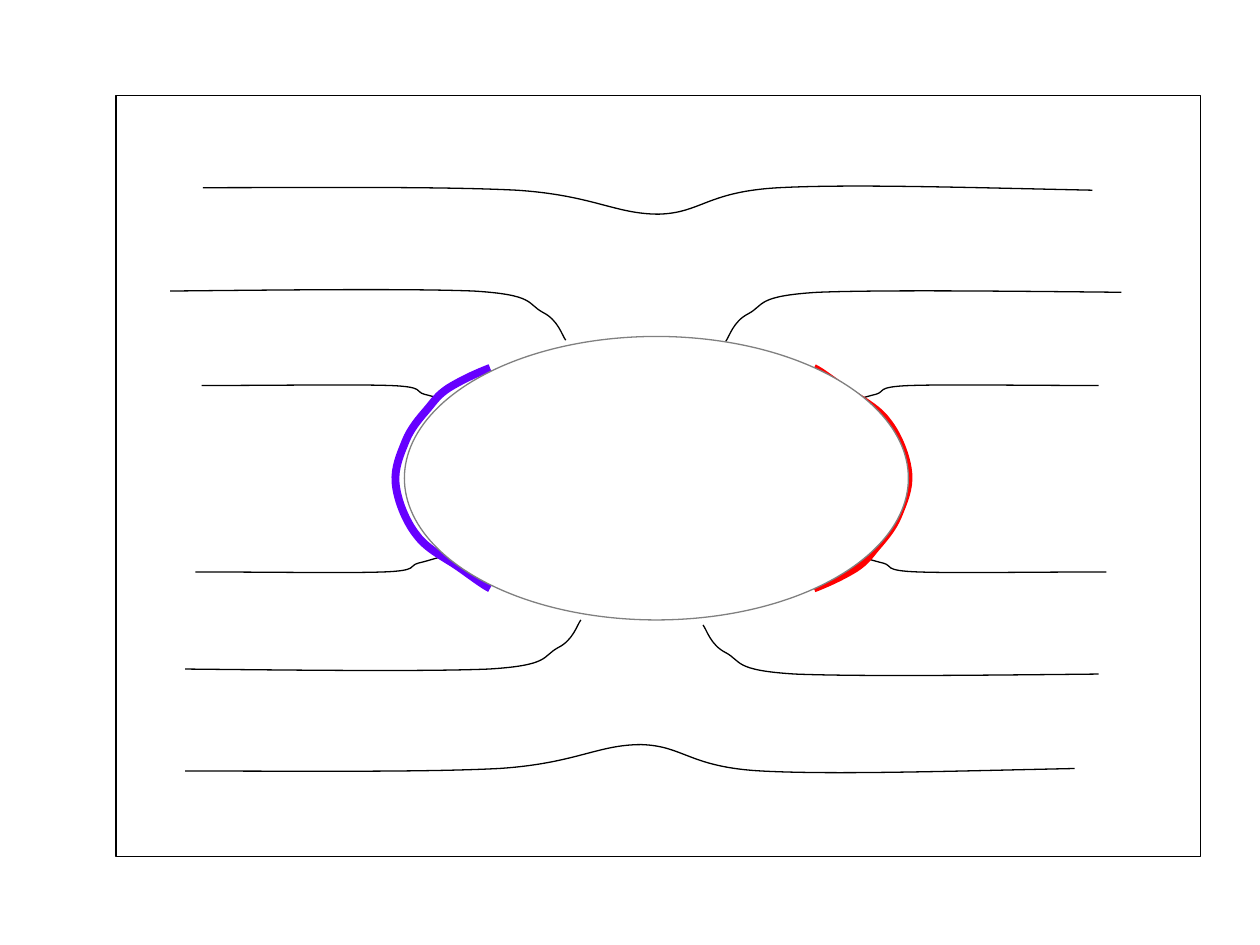
from dataclasses import dataclass

from pptx import Presentation
from pptx import util as u
from pptx.dml.color import RGBColor
from pptx.enum import shapes
from pptx.oxml.xmlchemy import OxmlElement


@dataclass(frozen=True)
class Theme:
    paper: str = "FFFFFF"
    ink: str = "000000"
    outline: str = "808080"
    right_cap: str = "FF0000"
    left_cap: str = "6600FF"
    thin: float = 0.75
    thick: float = 4.5


THEME = Theme()

SHORT_BRANCH = [(0, 0), (0.59, 0), (1.19, -0.01), (1.49, 0), (1.78, 0.01),
                (1.69, 0.05), (1.77, 0.07), (1.85, 0.09), (1.91, 0.11), (1.95, 0.12)]
LONG_BRANCH = [(0, 0), (0.95, -0.01), (1.91, -0.02), (2.41, 0), (2.9, 0.03),
               (2.83, 0.1), (2.96, 0.17), (3.08, 0.23), (3.11, 0.35), (3.14, 0.39)]
CAP = [(0, 0), (0.13, -0.05), (0.25, -0.11), (0.33, -0.16), (0.42, -0.22),
       (0.44, -0.26), (0.5, -0.33), (0.56, -0.4), (0.63, -0.48), (0.67, -0.58),
       (0.71, -0.68), (0.76, -0.79), (0.75, -0.91), (0.74, -1.04), (0.67, -1.22),
       (0.58, -1.33), (0.5, -1.44), (0.35, -1.51), (0.25, -1.58), (0.15, -1.65),
       (0.06, -1.72), (0, -1.75)]
PASSING_LINE = [(0, 0), (0.95, 0), (1.89, -0.01), (2.49, 0.02), (3.1, 0.06),
                (3.27, 0.21), (3.62, 0.21), (3.96, 0.2), (4, 0.03), (4.58, 0),
                (5.15, -0.03), (6.11, 0), (7.06, 0.02)]


def inches(value):
    return u.Cm(value * 2.54)


class FieldDiagram:
    def __init__(self, slide, theme):
        self.slide = slide
        self.theme = theme

    def style(self, shape, color, width):
        shape.shadow.inherit = False
        shape.fill.solid()
        shape.fill.fore_color.rgb = RGBColor.from_string(self.theme.paper)
        shape.line.color.rgb = RGBColor.from_string(color)
        shape.line.width = u.Pt(width)

    def preset(self, kind, left, top, width, height, color):
        shape = self.slide.shapes.add_shape(kind, *map(inches, (left, top, width, height)))
        self.style(shape, color, self.theme.thin)

    def curve(self, profile, x, y, flip_x=1, flip_y=1, color=None, width=None):
        start, *controls = [(inches(x + flip_x * dx), inches(y + flip_y * dy))
                            for dx, dy in profile]
        builder = self.slide.shapes.build_freeform(*start)
        builder.add_line_segments(controls, close=False)
        shape = builder.convert_to_shape()
        segments = shape._element.xpath(".//a:lnTo")
        for first in range(0, len(segments), 3):
            bezier = OxmlElement("a:cubicBezTo")
            segments[first].addprevious(bezier)
            for segment in segments[first:first + 3]:
                bezier.append(segment[0])
                segment.getparent().remove(segment)
        self.style(shape, color or self.theme.ink, width or self.theme.thin)


def main():
    deck = Presentation()
    deck.slide_width, deck.slide_height = inches(10), inches(7.5)
    diagram = FieldDiagram(deck.slides.add_slide(deck.slide_layouts[6]), THEME)

    diagram.preset(shapes.MSO_SHAPE.RECTANGLE, 0.92, 0.76, 8.61, 6.04, THEME.ink)
    for placement in [(8.72, 3.06, -1, 1), (1.6, 3.06, 1, 1),
                      (1.55, 4.54, 1, -1), (8.78, 4.54, -1, -1)]:
        diagram.curve(SHORT_BRANCH, *placement)
    for placement in [(1.35, 2.31, 1, 1), (8.72, 5.35, -1, -1),
                      (1.47, 5.31, 1, -1), (8.9, 2.32, -1, 1)]:
        diagram.curve(LONG_BRANCH, *placement)
    diagram.curve(CAP, 6.46, 4.67, color=THEME.right_cap, width=THEME.thick)
    diagram.curve(CAP, 3.89, 2.92, -1, -1, color=THEME.left_cap, width=THEME.thick)
    diagram.preset(shapes.MSO_SHAPE.OVAL, 3.21, 2.67, 4, 2.25, THEME.outline)
    diagram.curve(PASSING_LINE, 1.61, 1.49)
    diagram.curve(PASSING_LINE, 1.47, 6.12, flip_y=-1)

    deck.save("out.pptx")


if __name__ == "__main__":
    main()
